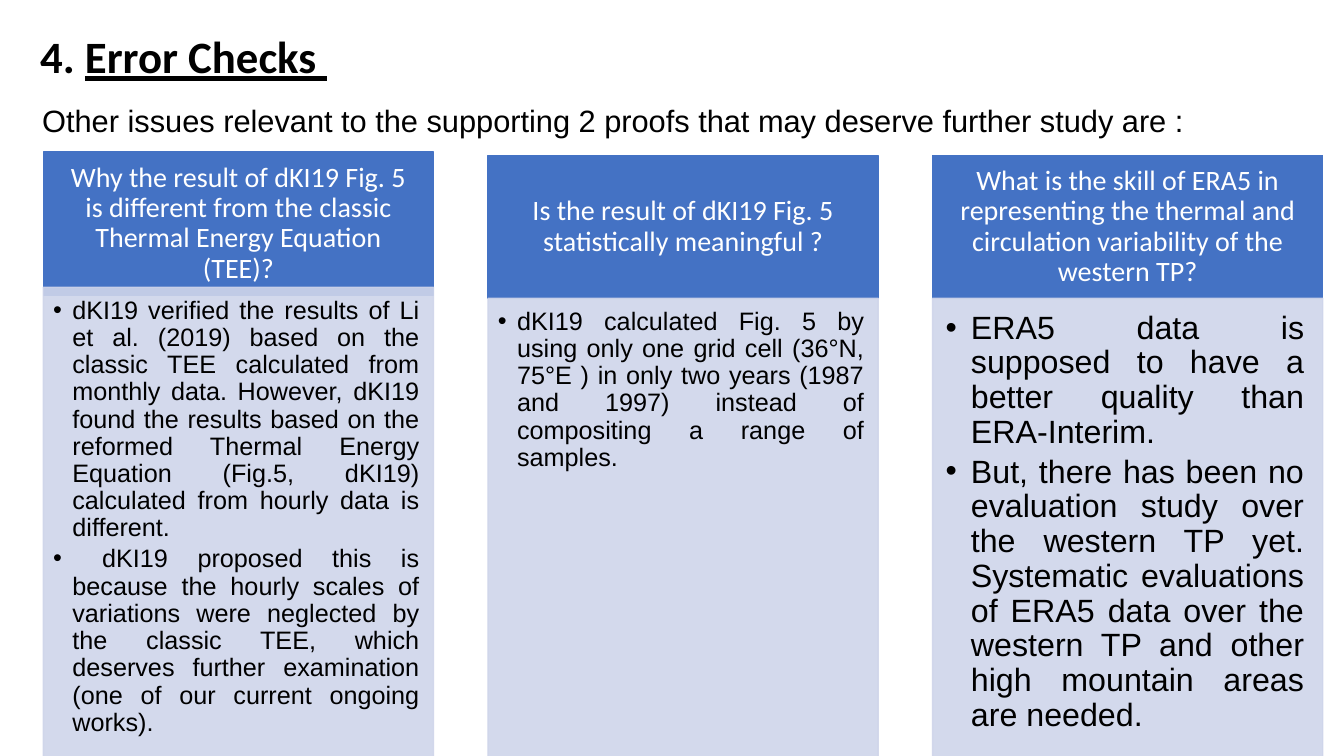
"""Build the Error Checks slide: a heading above three question columns."""
from lxml import etree
from pptx import Presentation
from pptx import util as u
from pptx.dml.color import RGBColor
from pptx.enum import shapes, text
from pptx.oxml.ns import qn

PX = 9144
BLACK = RGBColor(0, 0, 0)
WHITE = RGBColor(255, 255, 255)
BLUE = RGBColor(0x44, 0x72, 0xC4)
PALE = RGBColor(0xCF, 0xD5, 0xEA)
LEFT, PITCH, WIDTH, HEAD_HEIGHT = 43, 441, 387, 142

COLUMNS = [
    dict(
        question="Why the result of dKI19 Fig. 5 is different from the classic "
                 "Thermal Energy Equation (TEE)?",
        answers=[
            "dKI19 verified the results of Li et al. (2019) based on the classic TEE "
            "calculated from monthly data. However, dKI19 found the results based on "
            "the reformed Thermal Energy Equation (Fig.5, dKI19) calculated from "
            "hourly data is different.",
            " dKI19 proposed this is because the hourly scales of variations were "
            "neglected by the classic TEE, which deserves further examination (one of "
            "our current ongoing works). ",
        ],
        head_top=151, body_top=285, body_height=481,
        size=18, insets=(10, 10, 14, 16), indent=19,
    ),
    dict(
        question="Is the result of dKI19 Fig. 5 statistically meaningful ?",
        answers=[
            "dKI19 calculated Fig. 5 by using only one grid cell (36°N, 75°E ) in only "
            "two years (1987 and 1997) instead of compositing a range of samples.",
        ],
        head_top=154, body_top=296, body_height=467,
        size=18, insets=(10, 10, 14, 16), indent=19,
    ),
    dict(
        question="What is the skill of ERA5 in representing the thermal and "
                 "circulation variability of the western TP?",
        answers=[
            "ERA5 data is supposed to have a better quality than ERA-Interim.",
            "But, there has been no evaluation study over the western TP yet. "
            "Systematic evaluations of ERA5 data over the western TP and other high "
            "mountain areas are needed.",
        ],
        head_top=154, body_top=296, body_height=467,
        size=23, insets=(13, 13, 18, 20), indent=25,
    ),
]


def px(length):
    """Turn a length in px into EMU."""
    return u.Emu(length * PX)


def add_span(para, words, size, font, color, bold=False, underline=False):
    """Add one run of text to a paragraph."""
    span = para.add_run()
    span.text = words
    span.font.size = u.Pt(size)
    span.font.name = font
    span.font.color.rgb = color
    span.font.bold = bold
    span.font.underline = underline


def add_text_box(page, left, top, width, height):
    """Add a wrapping text box and return its text frame."""
    frame = page.shapes.add_textbox(*map(px, (left, top, width, height))).text_frame
    frame.word_wrap = True
    return frame


def add_panel(page, area, color, insets, anchor):
    """Add a flat rectangle and return it."""
    box = page.shapes.add_shape(shapes.MSO_SHAPE.RECTANGLE, *map(px, area))
    box.shadow.inherit = False
    box.fill.solid()
    box.fill.fore_color.rgb = color
    box.line.color.rgb = color
    box.line.width = u.Pt(1)
    frame = box.text_frame
    frame.word_wrap = True
    frame.vertical_anchor = anchor
    (frame.margin_left, frame.margin_top,
     frame.margin_right, frame.margin_bottom) = map(px, insets)
    return box


def fade(box, percent):
    """Set the opacity of a rectangle's fill and line."""
    for color in box.element.spPr.iter(qn("a:srgbClr")):
        etree.SubElement(color, qn("a:alpha"), val=str(percent * 1000))


def add_bullet(para, indent):
    """Give a paragraph a round bullet with a hanging indent."""
    props = para._p.get_or_add_pPr()
    props.set("marL", str(px(indent)))
    props.set("indent", str(-px(indent)))
    etree.SubElement(props, qn("a:buFont"), typeface="Arial")
    etree.SubElement(props, qn("a:buChar"), char="•")


def add_question(page, left, column):
    """Add the blue header of a column."""
    area = (left, column["head_top"], WIDTH, HEAD_HEIGHT)
    box = add_panel(page, area, BLUE, (16, 9, 16, 9), text.MSO_ANCHOR.MIDDLE)
    para = box.text_frame.paragraphs[0]
    para.alignment = text.PP_ALIGN.CENTER
    para.line_spacing = 0.9
    para.space_after = u.Pt(7)
    add_span(para, column["question"], 20, "Calibri", WHITE)


def add_answers(page, left, column):
    """Add the pale body of a column with its bullets."""
    area = (left, column["body_top"], WIDTH, column["body_height"])
    box = add_panel(page, area, PALE, column["insets"], text.MSO_ANCHOR.TOP)
    fade(box, 90)
    frame = box.text_frame
    for index, answer in enumerate(column["answers"]):
        para = frame.add_paragraph() if index else frame.paragraphs[0]
        para.level = 1
        para.alignment = text.PP_ALIGN.JUSTIFY
        para.line_spacing = 0.9
        para.space_after = u.Pt(column["size"] * 0.15)
        add_bullet(para, column["indent"])
        add_span(para, answer, column["size"], "Arial", BLACK)


def add_heading(page):
    """Add the title and the introductory sentence."""
    frame = add_text_box(page, 32, 91, 1172, 50)
    frame.auto_size = text.MSO_AUTO_SIZE.SHAPE_TO_FIT_TEXT
    intro = frame.paragraphs[0]
    intro.alignment = text.PP_ALIGN.JUSTIFY
    intro.line_spacing = 1.15
    intro.space_before = u.Pt(2)
    intro.space_after = u.Pt(6)
    add_span(intro, "Other issues relevant to the supporting 2 proofs that may "
                    "deserve further study are :", 22, "Arial", BLACK)

    title = add_text_box(page, 30, 30, 637, 102).paragraphs[0]
    title.line_spacing = 0.9
    add_span(title, "4. ", 32, "Calibri", BLACK, bold=True)
    add_span(title, "Error Checks ", 32, "Calibri", BLACK, bold=True, underline=True)


def main():
    """Build and save the deck."""
    deck = Presentation()
    deck.slide_width, deck.slide_height = px(1333), px(750)
    page = deck.slides.add_slide(deck.slide_layouts[6])
    add_heading(page)
    for index, column in enumerate(COLUMNS):
        left = LEFT + index * PITCH
        add_question(page, left, column)
        add_answers(page, left, column)
    deck.save("out.pptx")


if __name__ == "__main__":
    main()
